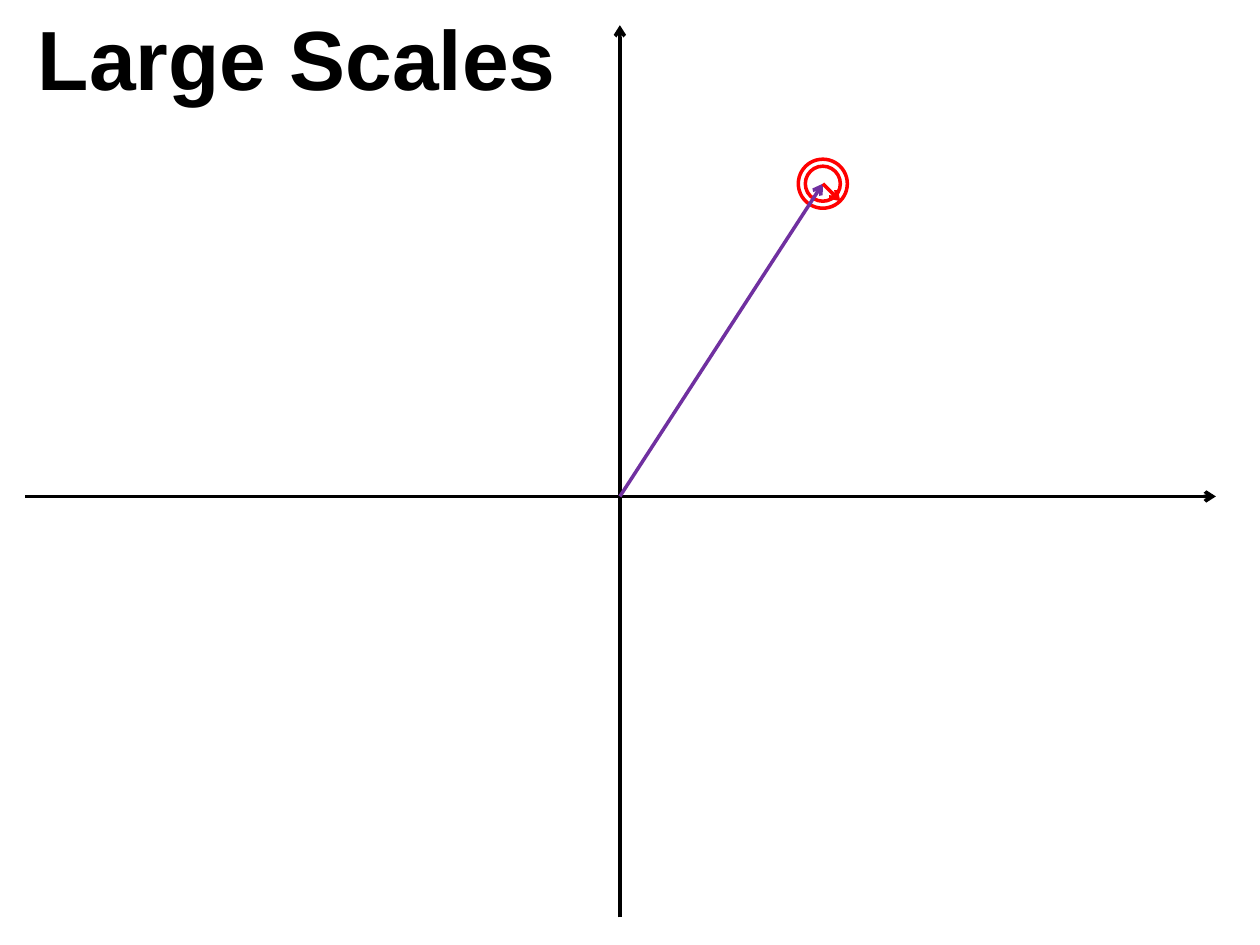
from lxml import etree
from pptx import Presentation
from pptx.dml.color import RGBColor
from pptx.enum.shapes import MSO_CONNECTOR, MSO_SHAPE
from pptx.enum.text import MSO_ANCHOR, MSO_AUTO_SIZE, PP_ALIGN
from pptx.oxml.ns import qn
from pptx.util import Pt

STRAIGHT = MSO_CONNECTOR.STRAIGHT
OVAL = MSO_SHAPE.OVAL
LEFT = PP_ALIGN.LEFT
TOP = MSO_ANCHOR.TOP
FIT_SHAPE = MSO_AUTO_SIZE.SHAPE_TO_FIT_TEXT

COLORS = {"ink": "000000", "ring": "FF0000", "position": "7030A0"}
TITLE_ONLY = 5


def apply(target, formats):
    for name, value in formats.items():
        setattr(target, name, value)


class Diagram:
    font = "Arial"
    title_size = 48
    line_width = 2

    def __init__(self, slide):
        self.slide = slide

    def color(self, name):
        return RGBColor.from_string(COLORS[name])

    def stroke(self, line, color):
        line.color.rgb = self.color(color)
        line.width = Pt(self.line_width)

    def title(self, text, left, top, width, height):
        heading = self.slide.shapes.title
        apply(heading, {"left": Pt(left), "top": Pt(top),
                        "width": Pt(width), "height": Pt(height)})
        frame = heading.text_frame
        frame.text = text
        apply(frame, {"word_wrap": False, "vertical_anchor": TOP,
                      "auto_size": FIT_SHAPE})
        paragraph = frame.paragraphs[0]
        paragraph.alignment = LEFT
        font = paragraph.runs[0].font
        apply(font, {"name": self.font, "size": Pt(self.title_size), "bold": True})
        font.color.rgb = self.color("ink")

    def arrow(self, start, end, color, group=None):
        shapes = (group or self.slide).shapes
        connector = shapes.add_connector(STRAIGHT, *map(Pt, (*start, *end)))
        self.stroke(connector.line, color)
        properties = connector.line._get_or_add_ln()
        etree.SubElement(properties, qn("a:tailEnd"), type="arrow")
        etree.SubElement(properties.getparent(), qn("a:effectLst"))

    def circle(self, center, radius, color):
        x, y = center
        ring = self.slide.shapes.add_shape(
            OVAL, *map(Pt, (x - radius, y - radius, 2 * radius, 2 * radius)))
        ring.shadow.inherit = False
        ring.fill.background()
        self.stroke(ring.line, color)


def main():
    deck = Presentation()
    deck.slide_width, deck.slide_height = Pt(720), Pt(540)
    slide = deck.slides.add_slide(deck.slide_layouts[TITLE_ONLY])
    diagram = Diagram(slide)

    origin_x, origin_y = origin = (354.24, 283.68)
    target_x, target_y = target = (470.2, 105)
    margin, axis_right, axis_bottom = 14.4, 694.8, 524.16
    inner_radius, outer_radius = 10, 14

    axes = slide.shapes.add_group_shape()
    diagram.arrow((origin_x, axis_bottom), (origin_x, margin), "ink", axes)
    diagram.arrow((margin, origin_y), (axis_right, origin_y), "ink", axes)

    for radius in (outer_radius, inner_radius):
        diagram.circle(target, radius, "ring")
    diagram.arrow(origin, target, "position")
    diagram.arrow(target, (target_x + inner_radius, target_y + inner_radius), "ring")

    diagram.title("Large Scales", margin, 0, 322, 65.5)
    deck.save("out.pptx")


if __name__ == "__main__":
    main()
